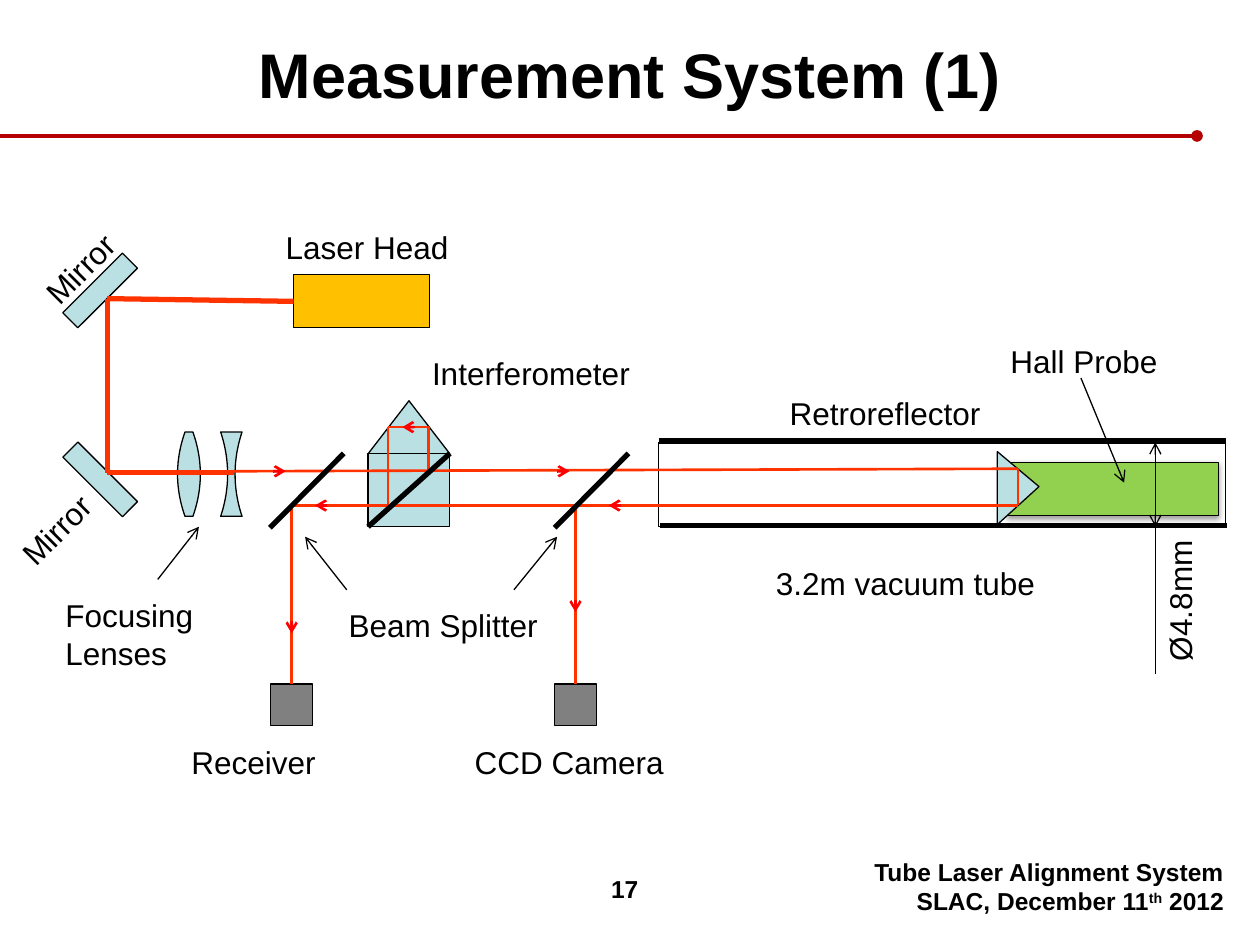
"""Build the slide that shows the optical layout of the laser measurement system."""
import pptx
import pptx.dml.color
import pptx.enum.shapes
import pptx.enum.text
import pptx.oxml
import pptx.oxml.ns
import pptx.util

Cm = pptx.util.Cm
Pt = pptx.util.Pt
Shape = pptx.enum.shapes.MSO_SHAPE
Align = pptx.enum.text.PP_ALIGN
Anchor = pptx.enum.text.MSO_ANCHOR


class Theme:
    font = "Arial"
    title, label, footer = Pt(36), Pt(18), Pt(14)
    thin, beam, thick, rule = Pt(0.75), Pt(1.5), Pt(3), Pt(2.25)
    black = pptx.dml.color.RGBColor.from_string("000000")
    white = pptx.dml.color.RGBColor.from_string("FFFFFF")
    glass = pptx.dml.color.RGBColor.from_string("BBE0E3")
    probe = pptx.dml.color.RGBColor.from_string("92D050")
    laser = pptx.dml.color.RGBColor.from_string("FFC000")
    sensor = pptx.dml.color.RGBColor.from_string("808080")
    light = pptx.dml.color.RGBColor.from_string("FF3300")
    direction = pptx.dml.color.RGBColor.from_string("FF0000")
    accent = pptx.dml.color.RGBColor.from_string("B40000")


presentation = pptx.Presentation()
presentation.slide_width, presentation.slide_height = Cm(25.4), Cm(19.05)
slide = presentation.slides.add_slide(presentation.slide_layouts[6])


def add_text(text, left, top, width, height=1.02, size=Theme.label, bold=False,
             align=Align.LEFT, anchor=Anchor.TOP, rotation=0, wrap=False):
    """Write lines split at newlines; text between carets is superscript."""
    box = slide.shapes.add_textbox(Cm(left), Cm(top), Cm(width), Cm(height))
    box.rotation = rotation
    frame = box.text_frame
    frame.word_wrap = wrap
    frame.vertical_anchor = anchor
    for row, line in enumerate(text.split("\n")):
        paragraph = frame.add_paragraph() if row else frame.paragraphs[0]
        paragraph.alignment = align
        for part, words in enumerate(line.split("^")):
            run = paragraph.add_run()
            run.text = words
            run.font.name, run.font.size, run.font.bold = Theme.font, size, bold
            run.font.color.rgb = Theme.black
            if part % 2:
                run.font._element.set("baseline", "30000")


def add_line(x1, y1, x2, y2, color=Theme.black, width=Theme.thin, head=None, tail=None):
    """Draw a straight line with optional end marks."""
    line = slide.shapes.add_connector(
        pptx.enum.shapes.MSO_CONNECTOR.STRAIGHT, Cm(x1), Cm(y1), Cm(x2), Cm(y2))
    line.line.color.rgb, line.line.width = color, width
    outline = line.line._get_or_add_ln()
    for tag, mark in (("a:headEnd", head), ("a:tailEnd", tail)):
        if mark:
            end = pptx.oxml.parse_xml(f"<{tag} {pptx.oxml.ns.nsdecls('a')} type='{mark}'/>")
            outline.append(end)
    line._element.spPr.append(
        pptx.oxml.parse_xml(f"<a:effectLst {pptx.oxml.ns.nsdecls('a')}/>"))
    return line


add_line(0, 2.74, 24.13, 2.74, Theme.accent, Theme.rule, tail="oval")
add_text("Measurement System (1)", 1.27, 0.43, 22.86, 2.11, size=Theme.title, bold=True,
         align=Align.CENTER, anchor=Anchor.MIDDLE, wrap=True)
add_text("17", 12.07, 17.5, 1.12, 0.84, size=Theme.footer, bold=True)
add_text("Tube Laser Alignment System\nSLAC, December 11^th^ 2012", 13.97, 17.15, 10.95, 1.32,
         size=Theme.footer, bold=True, align=Align.RIGHT, wrap=True)

components = {}
for name, kind, left, top, width, height, fill, rotation in (
    ("tube", Shape.RECTANGLE, 13.28, 8.92, 11.43, 1.7, Theme.white, 0),
    ("probe", Shape.RECTANGLE, 20.32, 9.32, 4.24, 1.07, Theme.probe, 0),
    ("retroreflector", Shape.ISOSCELES_TRIANGLE, 19.79, 9.42, 1.47, 0.84, Theme.glass, 90),
    ("prism", Shape.ISOSCELES_TRIANGLE, 7.42, 8.08, 1.65, 1.07, Theme.glass, 0),
    ("cube", Shape.RECTANGLE, 7.42, 9.14, 1.65, 1.47, Theme.glass, 0),
    ("laser", Shape.RECTANGLE, 5.92, 5.54, 2.74, 1.07, Theme.laser, 0),
    ("receiver", Shape.RECTANGLE, 5.46, 13.79, 0.84, 0.84, Theme.sensor, 0),
    ("camera", Shape.RECTANGLE, 11.18, 13.79, 0.84, 0.84, Theme.sensor, 0),
    ("lower mirror", Shape.RECTANGLE, 1.17, 9.45, 1.7, 0.43, Theme.glass, 45),
    ("upper mirror", Shape.RECTANGLE, 1.17, 5.64, 1.7, 0.43, Theme.glass, 315),
):
    component = slide.shapes.add_shape(kind, Cm(left), Cm(top), Cm(width), Cm(height))
    component.rotation = rotation
    components[name] = component
components_fill = (Theme.white, Theme.probe, Theme.glass, Theme.glass, Theme.glass, Theme.laser,
                   Theme.sensor, Theme.sensor, Theme.glass, Theme.glass)
components["retroreflector"].adjustments[0] = 0.48

lenses = []
steps = [step / 10 for step in range(-10, 11)]
for left, right, bulge in ((3.73, 3.89, 0.15), (4.45, 4.88, -0.14)):
    right_side = [(right + bulge * (1 - u * u), 9.56 + 0.85 * u) for u in steps]
    left_side = [(left - bulge * (1 - u * u), 9.56 + 0.85 * u) for u in reversed(steps)]
    rim = [(Cm(x), Cm(y)) for x, y in right_side + left_side]
    builder = slide.shapes.build_freeform(*rim[0])
    builder.add_line_segments(rim[1:], close=True)
    lenses.append(builder.convert_to_shape())

fills = components_fill + (Theme.glass,) * len(lenses)
for part, fill in zip([*components.values(), *lenses], fills):
    part.shadow.inherit = False
    part.fill.solid()
    part.fill.fore_color.rgb = fill
    part.line.color.rgb, part.line.width = Theme.black, Theme.thin

components["probe"]._element.spPr.find(pptx.oxml.ns.qn("a:effectLst")).append(pptx.oxml.parse_xml(
    f"<a:outerShdw {pptx.oxml.ns.nsdecls('a')} blurRad='40000' dist='20000' dir='5400000' "
    "rotWithShape='0'><a:srgbClr val='000000'><a:alpha val='38000'/></a:srgbClr></a:outerShdw>"))

for x1, y1, x2, y2, width, source, side in (
    (5.88, 13.79, 5.88, 10.19, Theme.beam, "receiver", 0),
    (20.52, 9.45, 4.72, 9.5, Theme.beam, None, None),
    (20.52, 10.19, 5.88, 10.19, Theme.beam, None, None),
    (20.52, 10.19, 20.52, 9.45, Theme.beam, None, None),
    (11.6, 13.79, 11.6, 10.19, Theme.beam, "camera", 0),
    (8.64, 9.55, 8.64, 8.61, Theme.beam, None, None),
    (7.82, 10.19, 7.82, 8.61, Theme.beam, None, None),
    (8.64, 8.61, 7.82, 8.61, Theme.beam, None, None),
    (5.92, 6.07, 2.16, 6.02, Theme.thick, "laser", 1),
    (2.16, 9.53, 2.16, 6.02, Theme.thick, None, None),
    (4.72, 9.53, 2.16, 9.53, Theme.thick, None, None),
):
    ray = add_line(x1, y1, x2, y2, Theme.light, width)
    if source:
        ray.begin_connect(components[source], side)

for x, y, dx, dy in ((11.23, 9.5, 1, 0), (5.51, 9.5, 1, 0), (12.52, 10.19, -1, 0),
                     (8.36, 8.61, -1, 0), (6.6, 10.19, -1, 0),
                     (5.88, 12.52, 0, 1), (11.6, 12.09, 0, 1)):
    add_line(x, y, x + 0.25 * dx, y + 0.25 * dy, Theme.direction, Theme.beam, tail="arrow")

for ends in ((12.67, 9.14, 11.18, 10.64), (6.93, 9.14, 5.44, 10.64), (9.07, 9.14, 7.42, 10.62),
             (24.71, 8.89, 13.28, 8.89), (24.73, 10.59, 13.3, 10.59)):
    add_line(*ends, width=Theme.thick)

for ends in ((10.36, 11.89, 11.23, 10.82), (3.18, 11.68, 4.01, 10.62),
             (6.99, 11.89, 6.15, 10.82), (21.79, 7.62, 22.66, 9.73)):
    add_line(*ends, tail="arrow")
add_line(23.29, 8.92, 23.29, 10.62, head="arrow", tail="arrow")
add_line(23.29, 10.62, 23.29, 13.59)

for label, left, top, width, rotation in (
    ("Laser Head", 5.51, 4.47, 3.84, 0),
    ("Mirror", 0.53, 4.9, 2.18, 315),
    ("Mirror", 0.05, 10.16, 2.18, 315),
    ("Interferometer", 8.46, 7.01, 4.55, 0),
    ("Retroreflector", 15.67, 7.82, 4.39, 0),
    ("Hall Probe", 20.12, 6.78, 3.51, 0),
    ("3.2m vacuum tube", 15.39, 11.25, 5.79, 0),
    ("Ø4.8mm", 22.3, 11.58, 2.97, 270),
    ("Beam Splitter", 6.78, 12.09, 4.37, 0),
    ("Receiver", 3.61, 14.86, 3.05, 0),
    ("CCD Camera", 9.32, 14.86, 4.37, 0),
):
    add_text(label, left, top, width, rotation=rotation)
add_text("Focusing\nLenses", 1.07, 11.89, 3.35, 1.8)

presentation.save("out.pptx")
